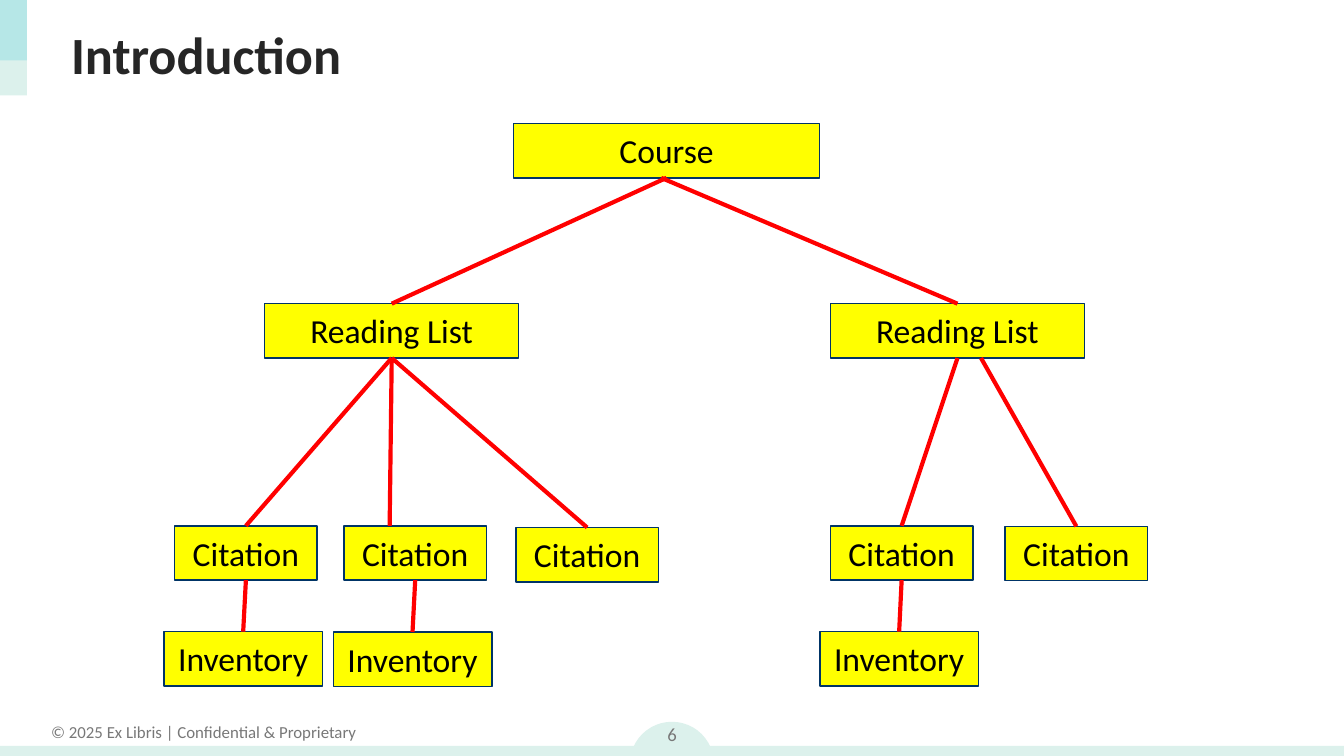
from lxml import etree
from pptx import Presentation
from pptx.dml.color import RGBColor
from pptx.enum.shapes import MSO_CONNECTOR, MSO_SHAPE
from pptx.enum.text import MSO_ANCHOR, MSO_AUTO_SIZE, PP_ALIGN
from pptx.oxml.ns import qn
from pptx.util import Pt

RECTANGLE = MSO_SHAPE.RECTANGLE
OVAL = MSO_SHAPE.OVAL
STRAIGHT = MSO_CONNECTOR.STRAIGHT
TOP, MIDDLE = MSO_ANCHOR.TOP, MSO_ANCHOR.MIDDLE
LEFT, CENTER = PP_ALIGN.LEFT, PP_ALIGN.CENTER
FIT_SHAPE = MSO_AUTO_SIZE.SHAPE_TO_FIT_TEXT
BOTTOM_SITE, TOP_SITE = 2, 0

WIDTH, HEIGHT = 720, 405
FONT = "Calibri"
MINT, AQUA = "DCF1EC", "50CFDA"
GRAY, DARK, BLACK = "787878", "262626", "000000"
YELLOW, NAVY, RED = "FFFF00", "003466", "FF0000"
NODE_HEIGHT = 29.1

LEVELS = [
    ("Course", 164.2, [(187.2, 0)]),
    ("Reading List", 136.1, [(54, 96.5), (357.1, 96.5)]),
    ("Citation", 76.3, [(5.8, 215.5), (96.5, 215.5), (188.6, 216.4),
                        (357.1, 215.5), (450.7, 215.8)]),
    ("Inventory", 85, [(0, 272.2), (90.7, 272.4), (351.4, 272.2)]),
]

LINKS = [
    (("Course", 0), ("Reading List", 0), 0, 0),
    (("Course", 0), ("Reading List", 1), -2.9, 0),
    (("Reading List", 0), ("Citation", 1), 0, -13.7),
    (("Reading List", 0), ("Citation", 0), 0, 0),
    (("Reading List", 0), ("Citation", 2), 0, 0),
    (("Reading List", 1), ("Citation", 3), 0, 0),
    (("Reading List", 1), ("Citation", 4), 12.6, 0),
    (("Citation", 0), ("Inventory", 0), 0, 0),
    (("Citation", 1), ("Inventory", 1), 0, 0),
    (("Citation", 3), ("Inventory", 2), 0, 0),
]


def color(value):
    return RGBColor.from_string(value)


def write(shape, text, size, font_color, alignment=CENTER, anchor=TOP, bold=False, wrap=True):
    frame = shape.text_frame
    frame.text = text
    frame.word_wrap = wrap
    frame.vertical_anchor = anchor
    paragraph = frame.paragraphs[0]
    paragraph.alignment = alignment
    font = paragraph.runs[0].font
    font.name, font.size, font.bold = FONT, Pt(size), bold
    font.color.rgb = color(font_color)


def add_box(slide, box, fill, kind=RECTANGLE, outline=None, alpha=None):
    shape = slide.shapes.add_shape(kind, *map(Pt, box))
    shape.shadow.inherit = False
    shape.fill.solid()
    shape.fill.fore_color.rgb = color(fill)
    if alpha is not None:
        fill_color = shape.fill._xPr.find(qn("a:solidFill"))[0]
        etree.SubElement(fill_color, qn("a:alpha"), val=str(alpha * 1000))
    if outline:
        shape.line.color.rgb = color(outline)
        shape.line.width = Pt(0.75)
    else:
        shape.line.fill.background()
    return shape


def add_text(slide, box, *content, **layout):
    shape = slide.shapes.add_textbox(*map(Pt, box))
    write(shape, *content, **layout)


def add_corner(slide, left, top, width, height):
    add_box(slide, (left, top, width, height), MINT)
    add_box(slide, (left, top, width, 32.4), AQUA, alpha=27)


def add_title(slide, left, top, width, height):
    add_text(slide, (left, top, width, height), "Introduction", 28, DARK,
             alignment=LEFT, anchor=MIDDLE, bold=True)


def add_footer(slide, left, top, width, height):
    center = left + width / 2
    add_box(slide, (center - 22.5, top + 8, 45, 45), MINT, OVAL)
    add_text(slide, (left + 19.4, top + 4.4, 179.3, 18),
             "© 2025 Ex Libris | Confidential & Proprietary", 9, GRAY, wrap=False)
    add_box(slide, (left, top + height - 5.4, width, 5.4), MINT)
    add_text(slide, (center - 21.3, top, 42.6, 28.8), "6", 10, GRAY, anchor=MIDDLE)


def add_link(slide, parent, child, start_shift, end_shift):
    start = parent.left + parent.width // 2 + Pt(start_shift), parent.top + parent.height
    end = child.left + child.width // 2 + Pt(end_shift), child.top
    connector = slide.shapes.add_connector(STRAIGHT, *start, *end)
    connector.line.color.rgb = color(RED)
    connector.line.width = Pt(2.25)
    etree.SubElement(connector._element.spPr, qn("a:effectLst"))
    if not start_shift:
        connector.begin_connect(parent, BOTTOM_SITE)
    if not end_shift:
        connector.end_connect(child, TOP_SITE)


def add_tree(slide, left, top):
    nodes = {}
    for label, width, places in LEVELS:
        for index, (x, y) in enumerate(places):
            box = (left + x, top + y, width, NODE_HEIGHT)
            node = add_box(slide, box, YELLOW, outline=NAVY)
            write(node, label, 18, BLACK)
            node.text_frame.auto_size = FIT_SHAPE
            nodes[label, index] = node
    for parent, child, start_shift, end_shift in LINKS:
        add_link(slide, nodes[parent], nodes[child], start_shift, end_shift)


def main():
    presentation = Presentation()
    presentation.slide_width, presentation.slide_height = Pt(WIDTH), Pt(HEIGHT)
    slide = presentation.slides.add_slide(presentation.slide_layouts[6])
    add_footer(slide, 0, 378.7, WIDTH, HEIGHT - 378.7)
    add_corner(slide, 0, 0, 14.4, 51.1)
    add_title(slide, 31, 5.8, 663, 45.4)
    add_tree(slide, 87.8, 66.2)
    presentation.save("out.pptx")


if __name__ == "__main__":
    main()
